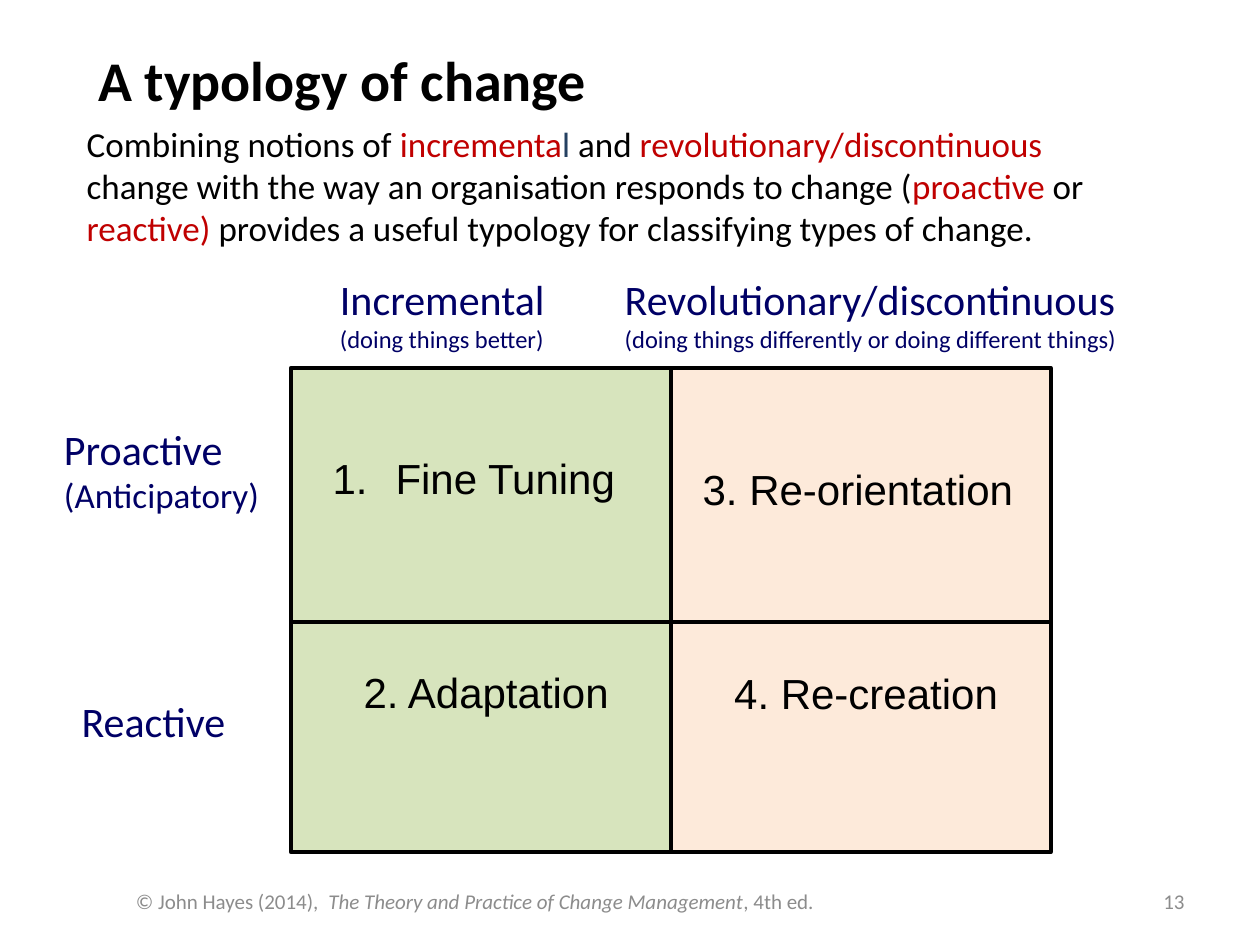
from lxml import etree
from pptx import Presentation
from pptx.dml.color import RGBColor
from pptx.enum.shapes import MSO_SHAPE as Shape
from pptx.enum.text import MSO_ANCHOR as Anchor, PP_ALIGN as Align
from pptx.oxml.ns import qn
from pptx.util import Pt

COLORS = {
    "black": "000000",
    "red": "C00000",
    "blue": "254061",
    "navy": "000066",
    "gray": "8C8C8C",
    "green": "D7E4BD",
    "peach": "FDEADA",
}
BODY_INSETS = (7.2, 3.6)
NO_INSETS = (0, 0)


def color(name):
    return RGBColor.from_string(COLORS[name])


def add_text(slide, box, paragraphs, insets=BODY_INSETS, align=Align.LEFT,
             anchor=Anchor.TOP, wrap=True):
    """Add a text box; each paragraph is a list of (text, font format) runs."""
    shape = slide.shapes.add_textbox(*map(Pt, box))
    frame = shape.text_frame
    across, down = map(Pt, insets)
    settings = {
        "word_wrap": wrap,
        "vertical_anchor": anchor,
        "margin_left": across,
        "margin_right": across,
        "margin_top": down,
        "margin_bottom": down,
    }
    for name, value in settings.items():
        setattr(frame, name, value)
    for index, runs in enumerate(paragraphs):
        paragraph = frame.add_paragraph() if index else frame.paragraphs[0]
        paragraph.alignment = align
        for text, font_format in runs:
            run = paragraph.add_run()
            run.text = text
            values = {"name": "Calibri", **font_format}
            run.font.color.rgb = color(values.pop("color", "black"))
            for name, value in values.items():
                setattr(run.font, name, value)
    return shape


def number_paragraph(paragraph, indent):
    """Give the paragraph an automatic number with a hanging indent."""
    properties = paragraph._p.get_or_add_pPr()
    properties.set("marL", str(Pt(indent)))
    properties.set("indent", str(-Pt(indent)))
    bullet_font = etree.SubElement(properties, qn("a:buFont"))
    bullet_font.set("typeface", "Arial")
    number = etree.SubElement(properties, qn("a:buAutoNum"))
    number.set("type", "arabicPeriod")


def add_heading(slide, left, top, width):
    title = [("A typology of change", {"size": Pt(32), "bold": True})]
    add_text(slide, (left + 6.5, top, width - 6.5, 46), [title])
    pieces = [
        ("Combining notions of ", "black"),
        ("incrementa", "red"),
        ("l ", "blue"),
        ("and ", "black"),
        ("revolutionary/discontinuous ", "red"),
        ("change with the way an organisation responds to change (", "black"),
        ("proactive", "red"),
        (" or ", "black"),
        ("reactive)", "red"),
        (" provides a useful typology for classifying types of change.", "black"),
    ]
    intro = [(text, {"size": Pt(20), "color": name}) for text, name in pieces]
    add_text(slide, (left, top + 44, width, 101.5), [intro])


def add_quadrants(slide, left, top, column_width, row_heights):
    for row, height in enumerate(row_heights):
        for column, fill in enumerate(("green", "peach")):
            x, y = left + column * column_width, top + sum(row_heights[:row])
            cell = slide.shapes.add_shape(
                Shape.RECTANGLE, Pt(x), Pt(y), Pt(column_width), Pt(height))
            cell.shadow.inherit = False
            cell.fill.solid()
            cell.fill.fore_color.rgb = color(fill)
            cell.line.color.rgb = color("black")
            cell.line.width = Pt(2.25)

    arial = {"name": "Arial", "size": Pt(24)}
    fine_tuning = add_text(slide, (left + 23.8, top + 48.3, 180.7, 42.5),
                           [[("Fine Tuning", arial)]], NO_INSETS)
    number_paragraph(fine_tuning.text_frame.paragraphs[0], 36)
    types = [
        ("2. Adaptation", 12.3, 167.1, 198.7),
        ("3. Re-orientation", 227.5, 51.2, 193),
        (" 4. Re-creation", 227.5, 167.8, 195.8),
    ]
    for text, x, y, width in types:
        add_text(slide, (left + x, top + y, width, 46), [[(text, arial)]],
                 align=Align.CENTER)


def add_axis_labels(slide, left, top):
    """Label columns and rows, measured from the quadrants' top left corner."""
    labels = [
        ("Proactive", "(Anticipatory)", 20, (-129.6, 31.7, 158.4, 53.3), True),
        ("Reactive", "", 0, (-119.5, 187.2, 159, 29), True),
        ("Incremental", "(doing things better)", 14, (28.1, -54, 153.4, 46), True),
        ("Revolutionary/discontinuous",
         "(doing things differently or doing different things)", 14,
         (190.8, -54, 284.4, 46), False),
    ]
    for name, note, note_size, (x, y, width, height), wrap in labels:
        paragraphs = [[(name, {"size": Pt(24), "color": "navy"})]]
        if note:
            paragraphs.append([(note, {"size": Pt(note_size), "color": "navy"})])
        add_text(slide, (left + x, top + y, width, height), paragraphs,
                 NO_INSETS, wrap=wrap)


def add_footer(slide, left, top, right, height):
    gray = {"size": Pt(12), "color": "gray"}
    citation = [
        ("© John Hayes (2014),  ", gray),
        ("The Theory and Practice of Change Management", {**gray, "italic": True}),
        (", 4th ed.", gray),
    ]
    add_text(slide, (left, top, 550, height), [citation], anchor=Anchor.MIDDLE)
    add_text(slide, (right - 168, top, 168, height), [[("13", gray)]],
             align=Align.RIGHT, anchor=Anchor.MIDDLE)


def main():
    presentation = Presentation()
    presentation.slide_width, presentation.slide_height = Pt(720), Pt(540)
    slide = presentation.slides.add_slide(presentation.slide_layouts[6])
    grid_left, grid_top = 166.2, 210.2
    add_quadrants(slide, grid_left, grid_top, 217.1, (145, 131.8))
    add_heading(slide, 42.5, 22.3, 607.7)
    add_axis_labels(slide, grid_left, grid_top)
    add_footer(slide, 70.6, 500.5, 684, 28.8)
    presentation.save("out.pptx")


if __name__ == "__main__":
    main()
